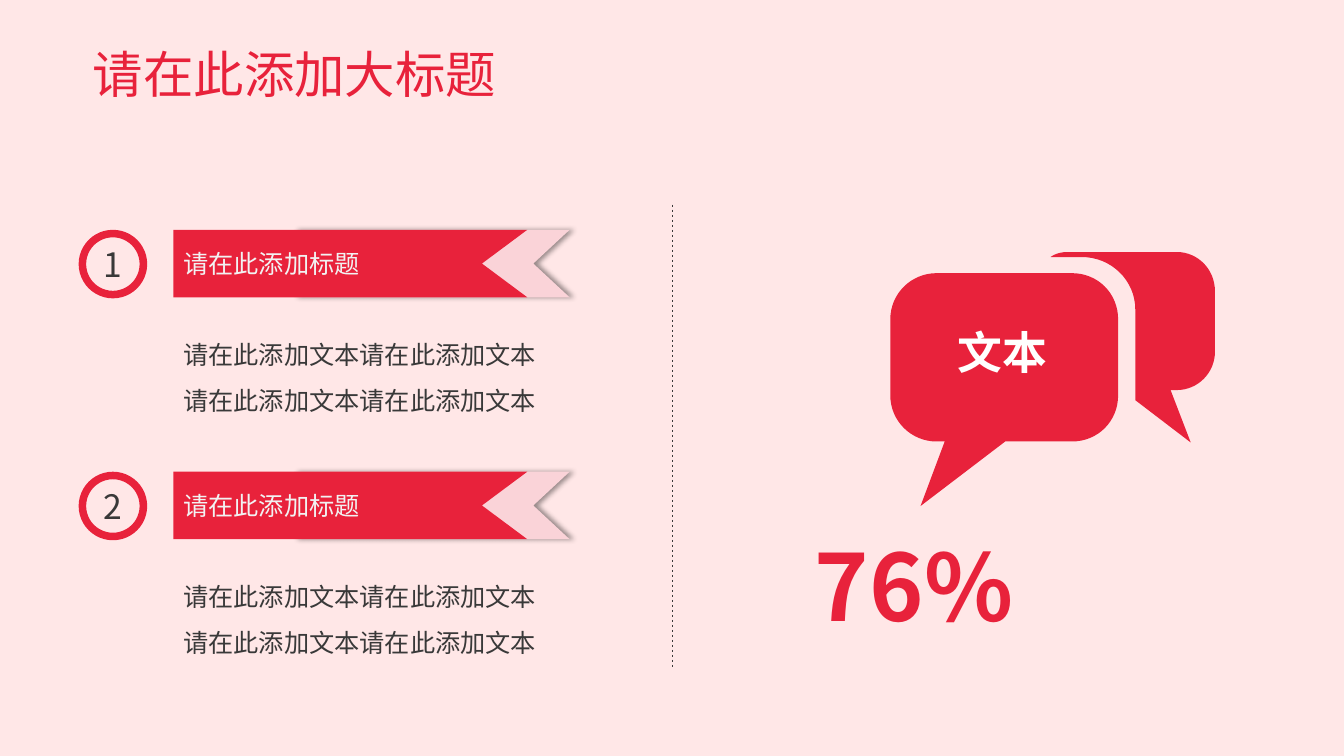
from dataclasses import dataclass
from pptx import Presentation
from pptx.dml.color import RGBColor
from pptx.enum.dml import MSO_LINE
from pptx.enum.shapes import MSO_CONNECTOR, MSO_SHAPE
from pptx.enum.text import MSO_ANCHOR, MSO_AUTO_SIZE, PP_ALIGN
from pptx.oxml.ns import qn
from pptx.shapes.autoshape import Shape
from pptx.slide import Slide
from pptx.util import Inches, Pt
from lxml.etree import SubElement

FONT = "Noto Sans CJK SC"
RED = RGBColor(0xE8, 0x22, 0x3B)
PINK = RGBColor(0xFA, 0xD3, 0xD8)
BLUSH = RGBColor(0xFF, 0xE7, 0xE7)
DARK = RGBColor(0x39, 0x39, 0x39)
PALE = RGBColor(0xF2, 0xF2, 0xF2)
WHITE = RGBColor(0xFF, 0xFF, 0xFE)
HIGH = 0.67

Point = tuple[float, float]


@dataclass
class Item:
    mark: str
    head: str
    body: str
    top: float


@dataclass
class Label:
    text: str
    box: tuple[float, float, float, float]
    size: int
    color: RGBColor


@dataclass
class Bubble:
    start: Point
    steps: list[tuple[float, ...]]


ITEMS = [
    Item(str(n + 1), "请在此添加标题", "请在此添加文本" * 4, 2.28 + 2.4 * n)
    for n in range(2)
]
LABELS = [
    Label("76%", (7.69, 5.2, 2.75, 1.21), 66, RED),
    Label("文本", (8.83, 3.17, 2.23, 0.64), 32, WHITE),
]
BUBBLES = [
    Bubble((9.29, 2.71), [
        (10.63, 2.71), (10.89, 2.71, 11.09, 2.91, 11.09, 3.17),
        (11.09, 3.92), (11.09, 4.18, 10.89, 4.38, 10.63, 4.38),
        (9.97, 4.38), (9.13, 5.02), (9.37, 4.38),
        (9.29, 4.38), (9.04, 4.38, 8.83, 4.18, 8.83, 3.92),
        (8.83, 3.17), (8.83, 2.91, 9.04, 2.71, 9.29, 2.71),
    ]),
    Bubble((10.59, 2.5), [
        (11.67, 2.5), (11.88, 2.5, 12.05, 2.67, 12.05, 2.89),
        (12.05, 3.49), (12.05, 3.7, 11.88, 3.87, 11.67, 3.87),
        (11.61, 3.87), (11.81, 4.39), (11.26, 3.97),
        (11.26, 3.07), (11.26, 2.78, 11.02, 2.55, 10.73, 2.55),
        (10.42, 2.55), (10.46, 2.52, 10.52, 2.5, 10.59, 2.5),
    ]),
]


def trace(bubble: Bubble, count: int = 16) -> list[Point]:
    points = [bubble.start]
    for step in bubble.steps:
        if len(step) == 2:
            points.append(step)
            continue
        x, y = points[-1]
        a, b, c, d, e, f = step
        for n in range(1, count + 1):
            t = n / count
            u = 1 - t
            k = (u ** 3, 3 * u * u * t, 3 * u * t * t, t ** 3)
            points.append((
                k[0] * x + k[1] * a + k[2] * c + k[3] * e,
                k[0] * y + k[1] * b + k[2] * d + k[3] * f,
            ))
    return points


def paint(shape: Shape, color: RGBColor) -> Shape:
    shape.shadow.inherit = False
    shape.fill.solid()
    shape.fill.fore_color.rgb = color
    shape.line.fill.background()
    return shape


def outline(slide: Slide, paths: list[list[Point]], color: RGBColor) -> Shape:
    paths = [[(Inches(x), Inches(y)) for x, y in path] for path in paths]
    pen = slide.shapes.build_freeform(*paths[0][0])
    for n, path in enumerate(paths):
        if n:
            pen.move_to(*path[0])
        pen.add_line_segments(path[1:], close=True)
    return paint(pen.convert_to_shape(), color)


def flag(slide: Slide, left: float, right: float, notch: float,
         top: float, color: RGBColor) -> Shape:
    end = top + HIGH
    return outline(slide, [[
        (left, top), (right, top), (notch, top + HIGH / 2),
        (right, end), (left, end),
    ]], color)


def write(shape: Shape, text: str, size: int, color: RGBColor,
          bold: bool = False, align: PP_ALIGN = PP_ALIGN.LEFT,
          space: float = 1.0, anchor: MSO_ANCHOR = MSO_ANCHOR.MIDDLE) -> None:
    frame = shape.text_frame
    look = {"word_wrap": True, "auto_size": MSO_AUTO_SIZE.NONE,
            "vertical_anchor": anchor}
    for key, value in look.items():
        setattr(frame, key, value)
    para = frame.paragraphs[0]
    para.alignment = align
    para.line_spacing = space
    run = para.add_run()
    run.text = text
    form = {"name": FONT, "size": Pt(size), "bold": bold}
    for key, value in form.items():
        setattr(run.font, key, value)
    run.font.color.rgb = color
    SubElement(run.font._element, qn("a:ea"), typeface=FONT)


def shade(shape: Shape) -> None:
    glow = shape._element.spPr.find(qn("a:effectLst"))
    cast = SubElement(glow, qn("a:outerShdw"), blurRad=str(Pt(4)),
                      dist=str(Pt(3)), dir="0", algn="l", rotWithShape="0")
    tint = SubElement(cast, qn("a:srgbClr"), val="000000")
    SubElement(tint, qn("a:alpha"), val="40000")


def place(slide: Slide, *box: float) -> Shape:
    return slide.shapes.add_textbox(*map(Inches, box))


def entry(slide: Slide, item: Item) -> None:
    top = item.top
    shade(flag(slide, 2.92, 5.65, 5.29, top, PINK))
    band = flag(slide, 1.72, 5.23, 4.78, top, RED)
    write(band, item.head, 18, PALE)
    ring = slide.shapes.add_shape(
        MSO_SHAPE.DONUT, *map(Inches, (0.78, top, 0.68, 0.68)))
    ring.adjustments[0] = 0.11
    write(paint(ring, RED), item.mark, 24, DARK, align=PP_ALIGN.CENTER)
    write(place(slide, 1.72, top + 0.89, 3.76, 0.96), item.body, 18, DARK,
          space=1.5, anchor=MSO_ANCHOR.TOP)


def rule(slide: Slide) -> None:
    line = slide.shapes.add_connector(
        MSO_CONNECTOR.STRAIGHT, *map(Inches, (6.67, 2.03, 6.67, 6.62)))
    form = {"width": Pt(0.5), "dash_style": MSO_LINE.DASH}
    for key, value in form.items():
        setattr(line.line, key, value)
    line.line.color.rgb = DARK
    SubElement(line._element.spPr, qn("a:effectLst"))


def main() -> None:
    deck = Presentation()
    deck.slide_width = Inches(13.33)
    deck.slide_height = Inches(7.5)
    slide = deck.slides.add_slide(deck.slide_layouts[5])
    slide.background.fill.solid()
    slide.background.fill.fore_color.rgb = BLUSH
    title = slide.shapes.title
    spot = {"left": 0.82, "top": 0.3, "width": 9.52, "height": 0.93}
    for key, value in spot.items():
        setattr(title, key, Inches(value))
    write(title, "请在此添加大标题", 36, RED, space=0.9)
    for item in ITEMS:
        entry(slide, item)
    rule(slide)
    outline(slide, [trace(bubble) for bubble in BUBBLES], RED)
    for label in LABELS:
        write(place(slide, *label.box), label.text, label.size, label.color,
              bold=True, align=PP_ALIGN.CENTER, anchor=MSO_ANCHOR.TOP)
    deck.save("out.pptx")


if __name__ == "__main__":
    main()
